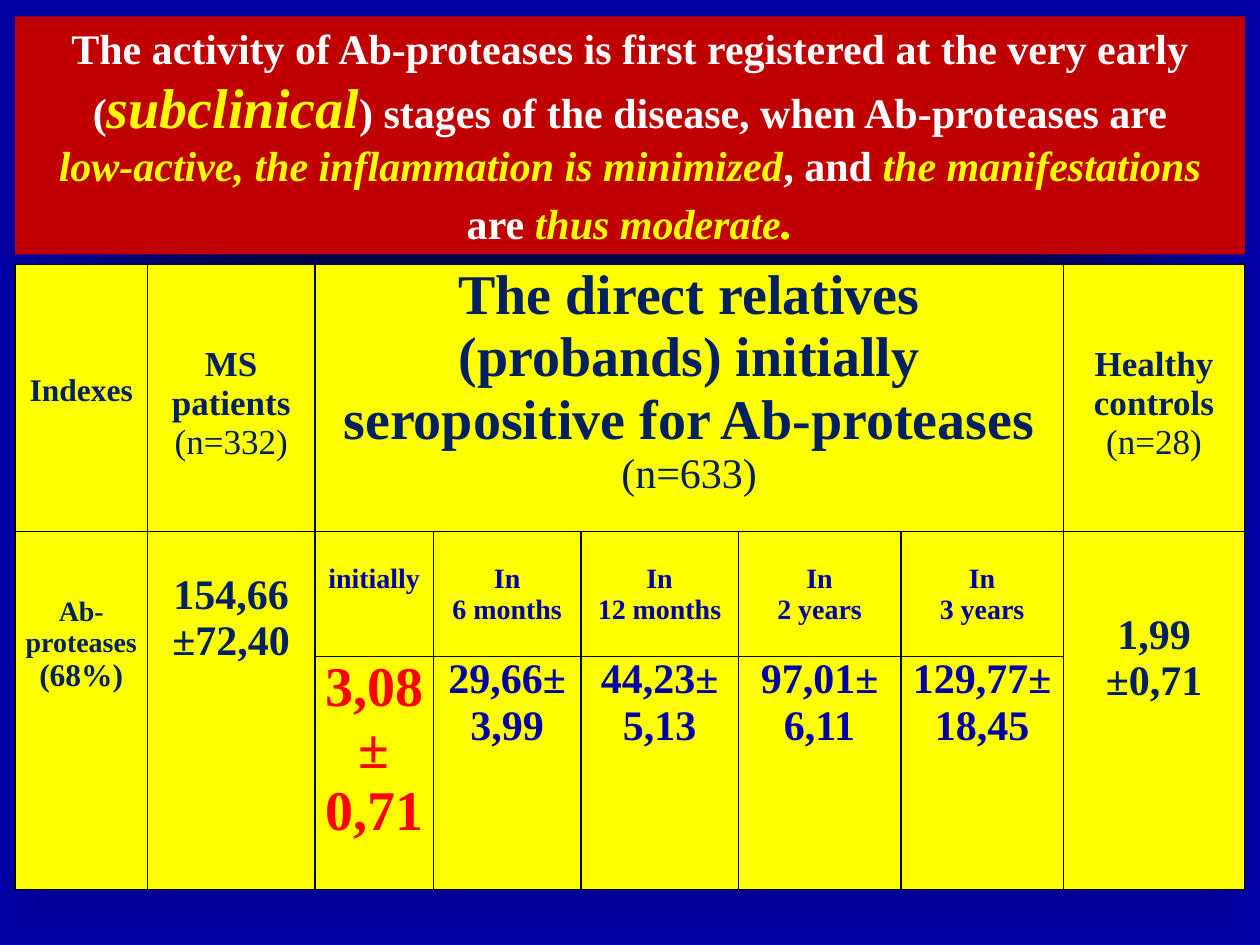
from dataclasses import dataclass
from typing import NamedTuple

import lxml.etree
import pptx
import pptx.dml.color
import pptx.enum.dml
import pptx.enum.shapes
import pptx.enum.text
import pptx.oxml
import pptx.oxml.ns
import pptx.util

Inches = pptx.util.Inches
qn = pptx.oxml.ns.qn


@dataclass(frozen=True)
class Theme:
    font: str = "Times New Roman"
    white: str = "FFFFFF"
    black: str = "000000"
    yellow: str = "FFFF00"
    crimson: str = "C00000"
    red: str = "FF0000"
    navy: str = "002060"
    blue: str = "0000A4"
    tiny: int = 16
    small: int = 18
    medium: int = 20
    large: int = 24
    dot: int = 28
    huge: int = 32
    border: float = 1
    line_height: float = 1.15


THEME = Theme()


class Span(NamedTuple):
    text: str
    size: int
    color: str = THEME.navy
    bold: bool = True
    italic: bool = False


class Entry(NamedTuple):
    row: int
    column: int
    lines: list[Span]
    lead: int = 0  # empty lines above the text
    lead_size: int = THEME.medium
    rows: int = 1
    columns: int = 1


def rgb(color: str) -> pptx.dml.color.RGBColor:
    return pptx.dml.color.RGBColor.from_string(color)


def add_span(para, span: Span) -> None:
    run = para.add_run()
    run.text = span.text
    run.font.name = THEME.font
    run.font.size = pptx.util.Pt(span.size)
    run.font.bold = span.bold
    run.font.italic = span.italic
    run.font.color.rgb = rgb(span.color)


def paint_background(page) -> None:
    fill = page.background.fill
    fill.gradient()
    for stop, color in zip(fill.gradient_stops, (THEME.black, THEME.blue)):
        stop.color.rgb = rgb(color)
    gradient = page.element.find(".//" + qn("a:gradFill"))
    linear = gradient.find(qn("a:lin"))
    radial = lxml.etree.Element(qn("a:path"), {"path": "shape"})
    centre = dict.fromkeys("ltrb", "50000")
    lxml.etree.SubElement(radial, qn("a:fillToRect"), centre)
    gradient.replace(linear, radial)


def add_title(page, lines: list[list[Span]]) -> None:
    box = page.shapes.add_shape(
        pptx.enum.shapes.MSO_SHAPE.RECTANGLE,
        Inches(0.12), Inches(0.13), Inches(9.76), Inches(1.89))
    box.shadow.inherit = False
    box.fill.solid()
    box.fill.fore_color.rgb = rgb(THEME.crimson)
    box.line.fill.background()
    frame = box.text_frame
    frame.word_wrap = True
    frame.vertical_anchor = pptx.enum.text.MSO_ANCHOR.MIDDLE
    para = frame.paragraphs[0]
    para.alignment = pptx.enum.text.PP_ALIGN.CENTER
    for number, line in enumerate(lines):
        if number:
            para.add_line_break()
        for span in line:
            add_span(para, span)


def style_cell(cell) -> None:
    cell.fill.solid()
    cell.fill.fore_color.rgb = rgb(THEME.yellow)
    properties = cell._tc.get_or_add_tcPr()
    for position, side in enumerate("LRTB"):
        edge = lxml.etree.Element(
            qn(f"a:ln{side}"), {"w": str(pptx.util.Pt(THEME.border))})
        solid = lxml.etree.SubElement(edge, qn("a:solidFill"))
        lxml.etree.SubElement(solid, qn("a:srgbClr"), {"val": THEME.black})
        properties.insert(position, edge)


def fill_cell(table, entry: Entry) -> None:
    cell = table.cell(entry.row, entry.column)
    if entry.rows > 1 or entry.columns > 1:
        cell.merge(table.cell(entry.row + entry.rows - 1,
                              entry.column + entry.columns - 1))
    cell.margin_left = cell.margin_right = Inches(0.07)
    cell.margin_bottom = 0
    cell.margin_top = pptx.util.Pt(entry.lead * entry.lead_size * THEME.line_height)
    for number, span in enumerate(entry.lines):
        frame = cell.text_frame
        para = frame.add_paragraph() if number else frame.paragraphs[0]
        para.alignment = pptx.enum.text.PP_ALIGN.CENTER
        add_span(para, span)


def add_grid(page, widths: list[float], heights: list[float],
             entries: list[Entry]) -> None:
    table = page.shapes.add_table(
        len(heights), len(widths), Inches(0.12), Inches(2.1),
        Inches(sum(widths)), Inches(sum(heights))).table
    table.first_row = table.horz_banding = False
    for column, width in zip(table.columns, widths):
        column.width = Inches(width)
    for row, height in zip(table.rows, heights):
        row.height = Inches(height)
    for cell in table.iter_cells():
        style_cell(cell)
    for entry in entries:
        fill_cell(table, entry)


def plain(text: str) -> Span:
    return Span(text, THEME.large, THEME.white)


def accent(text: str, size: int = THEME.large) -> Span:
    return Span(text, size, THEME.yellow, italic=True)


def count(text: str, size: int = THEME.medium) -> Span:
    return Span(text, size, bold=False)


TITLE = [
    [plain("The activity of Ab-proteases is first registered at the very early ("),
     accent("subclinical", THEME.huge),
     plain(") stages of the disease, when Ab-proteases are")],
    [accent("low-active, the inflammation is minimized"), plain(", and "),
     accent("the manifestations "), plain("are "), accent("thus moderate"),
     accent(".", THEME.dot)],
]

# Header row and the cells that span both lower rows
ENTRIES = [
    Entry(0, 0, [Span("Indexes", THEME.small)], 3, THEME.small),
    Entry(0, 1, [Span("MS patients", THEME.medium), count("(n=332)")], 2),
    Entry(0, 2, [Span("The direct relatives (probands) initially seropositive "
                      "for Ab-proteases", THEME.huge),
                 count("(n=633)", THEME.large)], columns=5),
    Entry(0, 7, [Span("Healthy controls", THEME.medium), count("(n=28)")], 2),
    Entry(1, 0, [Span("Ab-proteases", THEME.tiny), Span("(68%)", THEME.small)],
          2, THEME.tiny, rows=2),
    Entry(1, 1, [Span(text, THEME.large) for text in ("154,66", "±72,40")], 1, rows=2),
    Entry(1, 7, [Span(text, THEME.large) for text in ("1,99", "±0,71")], 2, rows=2),
]

# Follow-up columns: time above, mean and deviation below
FOLLOW_UP = [
    (["initially"], ["3,08±", "0,71"]),
    (["In", "6 months"], ["29,66±", "3,99"]),
    (["In", "12 months"], ["44,23±", "5,13"]),
    (["In", "2 years"], ["97,01±", "6,11"]),
    (["In", "3 years"], ["129,77±", "18,45"]),
]
for index, (times, values) in enumerate(FOLLOW_UP, start=2):
    size, color = (THEME.huge, THEME.red) if index == 2 else (THEME.large, THEME.blue)
    ENTRIES.append(Entry(1, index, [Span(text, THEME.tiny, THEME.blue) for text in times],
                         1, THEME.tiny))
    ENTRIES.append(Entry(2, index, [Span(text, size, color) for text in values]))


def main() -> None:
    deck = pptx.Presentation()
    deck.slide_width, deck.slide_height = Inches(10), Inches(7.5)
    page = deck.slides.add_slide(deck.slide_layouts[6])
    paint_background(page)
    add_title(page, TITLE)
    add_grid(page, [1.05, 1.33, 0.94, 1.17, 1.25, 1.29, 1.29, 1.44],
             [2.12, 0.99, 1.85], ENTRIES)
    deck.save("out.pptx")


if __name__ == "__main__":
    main()
